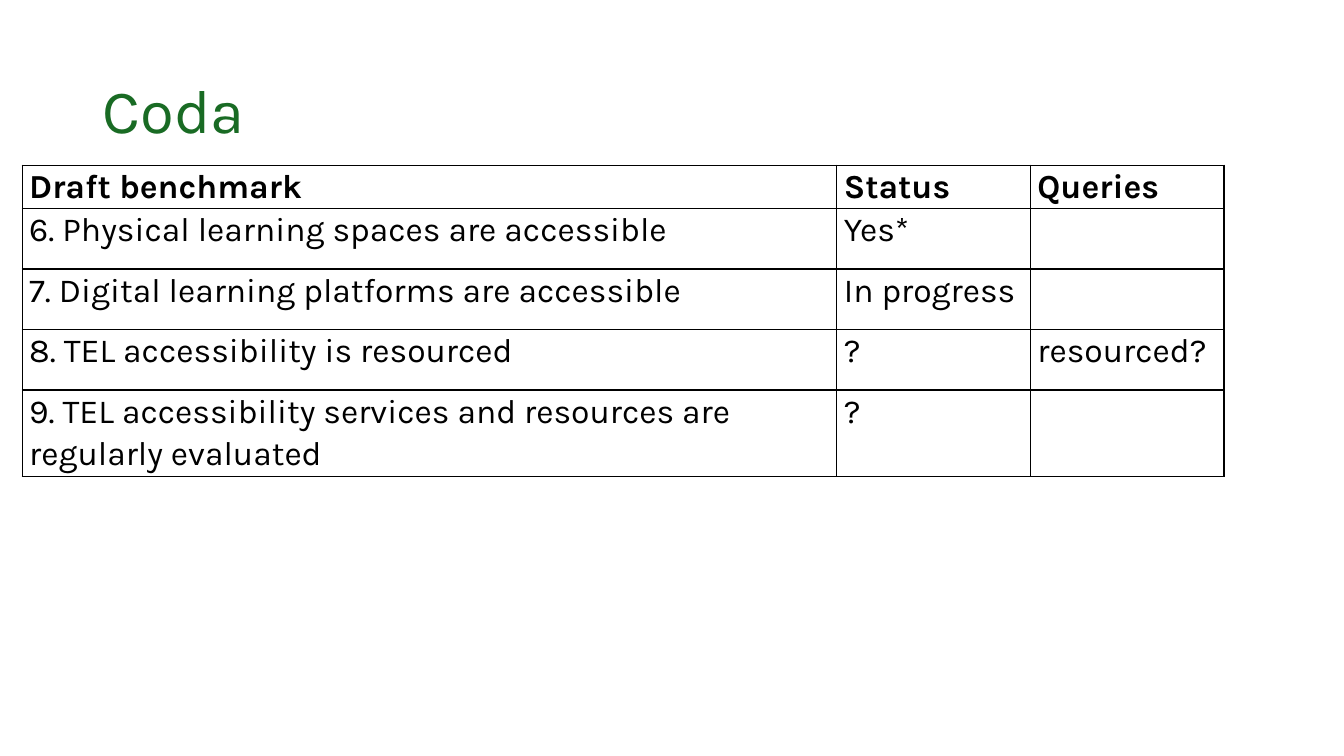
from lxml import etree
from pptx import Presentation
from pptx.dml.color import RGBColor
from pptx.enum import text
from pptx.oxml import ns
from pptx.util import Inches, Pt

GREEN = RGBColor(0x19, 0x6B, 0x24)
BLACK = RGBColor(0, 0, 0)
FONT = "Karla"

COLUMN_WIDTHS = [8.08, 1.92, 1.92]
ROW_HEIGHTS = [0.41, 0.6, 0.6, 0.6, 0.84]
BENCHMARKS = [
    ("Draft benchmark", "Status", "Queries"),
    ("6. Physical learning spaces are accessible", "Yes*", ""),
    ("7. Digital learning platforms are accessible", "In progress", ""),
    ("8. TEL accessibility is resourced", "?", "resourced?"),
    ("9. TEL accessibility services and resources are regularly evaluated", "?", ""),
]


def write(frame, words, size=24, color=BLACK, bold=False, spacing=1.07, after=8):
    paragraph = frame.paragraphs[0]
    paragraph.line_spacing = spacing
    paragraph.space_after = Pt(after)
    paragraph.font.size = Pt(size)
    if words:
        run = paragraph.add_run()
        run.text = words
        run.font.name = FONT
        run.font.size = Pt(size)
        run.font.bold = bold
        run.font.color.rgb = color


def draw_borders(cell, color=BLACK, width=1):
    properties = cell._tc.get_or_add_tcPr()
    for position, side in enumerate(("lnL", "lnR", "lnT", "lnB")):
        line = etree.Element(ns.qn(f"a:{side}"), w=str(Pt(width)))
        fill = etree.SubElement(line, ns.qn("a:solidFill"))
        etree.SubElement(fill, ns.qn("a:srgbClr"), val=str(color))
        properties.insert(position, line)


deck = Presentation()
deck.slide_width, deck.slide_height = Inches(13.33), Inches(7.5)
slide = deck.slides.add_slide(deck.slide_layouts[6])

heading = slide.shapes.add_textbox(
    Inches(0.92), Inches(0.4), Inches(11.5), Inches(1.45)).text_frame
heading.word_wrap = True
heading.vertical_anchor = text.MSO_ANCHOR.MIDDLE
write(heading, "Coda", size=44, color=GREEN, spacing=0.9, after=0)

benchmarks = slide.shapes.add_table(
    len(BENCHMARKS), len(COLUMN_WIDTHS), Inches(0.22), Inches(1.64),
    Inches(sum(COLUMN_WIDTHS)), Inches(sum(ROW_HEIGHTS))).table
benchmarks.first_row = True
benchmarks.horz_banding = False
for column, width in zip(benchmarks.columns, COLUMN_WIDTHS):
    column.width = Inches(width)
for row, height in zip(benchmarks.rows, ROW_HEIGHTS):
    row.height = Inches(height)

for row_index, entries in enumerate(BENCHMARKS):
    for column_index, entry in enumerate(entries):
        cell = benchmarks.cell(row_index, column_index)
        cell.margin_left = cell.margin_right = Inches(0.07)
        cell.margin_top = cell.margin_bottom = 0
        cell.fill.background()
        draw_borders(cell)
        write(cell.text_frame, entry, bold=row_index == 0)

deck.save("out.pptx")
